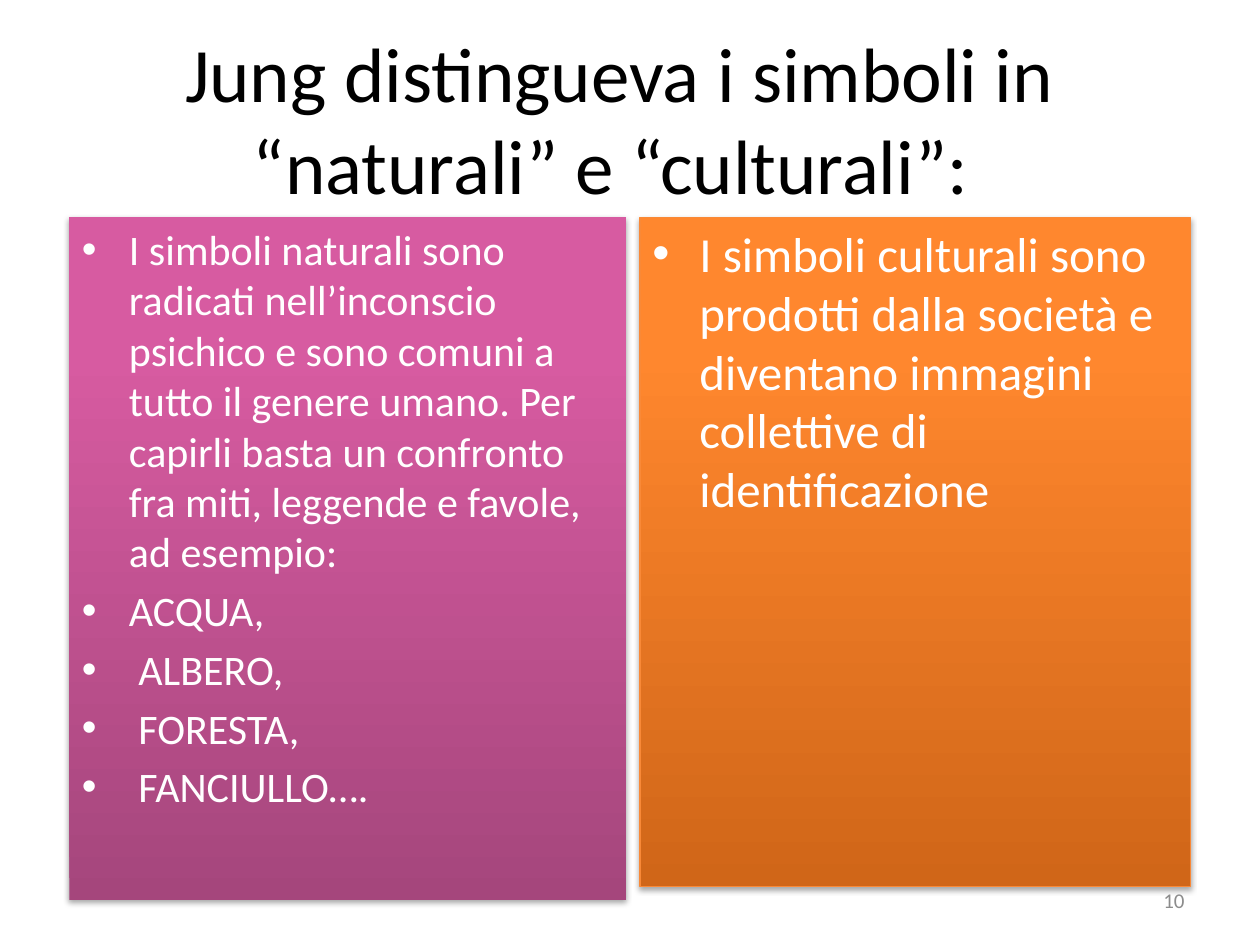
from copy import deepcopy
from dataclasses import dataclass

from lxml import etree
from pptx import Presentation
from pptx import util as u
from pptx.dml.color import RGBColor
from pptx.enum import shapes, text
from pptx.oxml.ns import qn


@dataclass(frozen=True)
class Theme:
    font: str = "Calibri"
    title_size: int = 44
    natural_size: int = 24
    cultural_size: int = 28
    number_size: int = 12
    dark: str = "000000"
    light: str = "FFFFFF"
    grey: str = "8C8C8C"
    pink: tuple = ((0, "A5467C"), (0.8, "D75BA1"), (1, "DA59A2"))
    orange: tuple = ((0, "D06618"), (0.8, "FF872E"), (1, "FF8730"))
    orange_line: str = "F98937"


class SlideBuilder:
    def __init__(self, slide, theme):
        self.slide = slide
        self.theme = theme

    def set_text(self, sp, paragraphs, size, color, align, anchor):
        tf = sp.text_frame
        frame_format = {"word_wrap": True, "vertical_anchor": anchor,
                        "auto_size": text.MSO_AUTO_SIZE.NONE}
        for name, value in frame_format.items():
            setattr(tf, name, value)
        for i, line in enumerate(paragraphs):
            p = tf.paragraphs[0] if i == 0 else tf.add_paragraph()
            p.alignment = align
            r = p.add_run()
            r.text = line
            for name, value in {"name": self.theme.font, "size": u.Pt(size)}.items():
                setattr(r.font, name, value)
            r.font.color.rgb = RGBColor.from_string(color)
        return tf

    def label(self, box, line, size, color, align):
        sp = self.slide.shapes.add_textbox(*map(u.Cm, box))
        self.set_text(sp, [line], size, color, align, text.MSO_ANCHOR.MIDDLE)

    def panel(self, box, paragraphs, size, stops, line_color=None):
        sp = self.slide.shapes.add_shape(shapes.MSO_SHAPE.RECTANGLE, *map(u.Cm, box))
        self.gradient(sp, stops)
        if line_color:
            sp.line.color.rgb = RGBColor.from_string(line_color)
            sp.line.width = u.Pt(0.75)
        else:
            sp.line.fill.background()
        self.drop_shadow(sp)
        tf = self.set_text(sp, paragraphs, size, self.theme.light,
                           text.PP_ALIGN.LEFT, text.MSO_ANCHOR.TOP)
        for p in tf.paragraphs:
            p.space_before = u.Pt(size * 0.2)
            self.bullet(p)

    def gradient(self, sp, stops):
        """Fill from bottom to top with any number of stops."""
        sp.fill.gradient()
        sp.fill.gradient_angle = 90
        stop_list = sp._element.spPr.find(".//" + qn("a:gsLst"))
        while len(stop_list) < len(stops):
            stop_list.append(deepcopy(stop_list[0]))
        for stop, (position, color) in zip(sp.fill.gradient_stops, stops):
            stop.position = position
            stop.color.rgb = RGBColor.from_string(color)

    def drop_shadow(self, sp):
        sp.shadow.inherit = False
        effects = sp._element.spPr.find(qn("a:effectLst"))
        shadow = etree.SubElement(effects, qn("a:outerShdw"), blurRad=str(u.Pt(3.1)),
                                  dist=str(u.Pt(1.8)), dir="5400000", rotWithShape="0")
        color = etree.SubElement(shadow, qn("a:srgbClr"), val=self.theme.dark)
        etree.SubElement(color, qn("a:alpha"), val="35000")

    def bullet(self, p):
        pPr = p._p.get_or_add_pPr()
        indent = u.Cm(0.95)
        pPr.set("marL", str(indent))
        pPr.set("indent", str(-indent))
        etree.SubElement(pPr, qn("a:buFont"), typeface="Arial")
        etree.SubElement(pPr, qn("a:buChar"), char="•")


def main():
    prs = Presentation()
    prs.slide_width, prs.slide_height = u.Cm(25.4), u.Cm(19.05)
    theme = Theme()
    s = SlideBuilder(prs.slides.add_slide(prs.slide_layouts[6]), theme)

    s.label((0.99, 0, 23.01, 4.75), "Jung distingueva i simboli in “naturali” e “culturali”: ",
            theme.title_size, theme.dark, text.PP_ALIGN.CENTER)
    s.panel((1.4, 4.38, 11.23, 13.77),
            ["I simboli naturali sono radicati nell’inconscio psichico e sono comuni a "
             "tutto il genere umano. Per capirli basta un confronto fra miti, leggende "
             "e favole, ad esempio:",
             "ACQUA,", " ALBERO,", " FORESTA,", " FANCIULLO…."],
            theme.natural_size, theme.pink)
    s.panel((12.9, 4.38, 11.1, 13.49),
            ["I simboli culturali sono prodotti dalla società e diventano immagini "
             "collettive di identificazione"],
            theme.cultural_size, theme.orange, theme.orange_line)
    s.label((18.2, 17.65, 5.93, 1.01), "10",
            theme.number_size, theme.grey, text.PP_ALIGN.RIGHT)

    prs.save("out.pptx")


if __name__ == "__main__":
    main()
